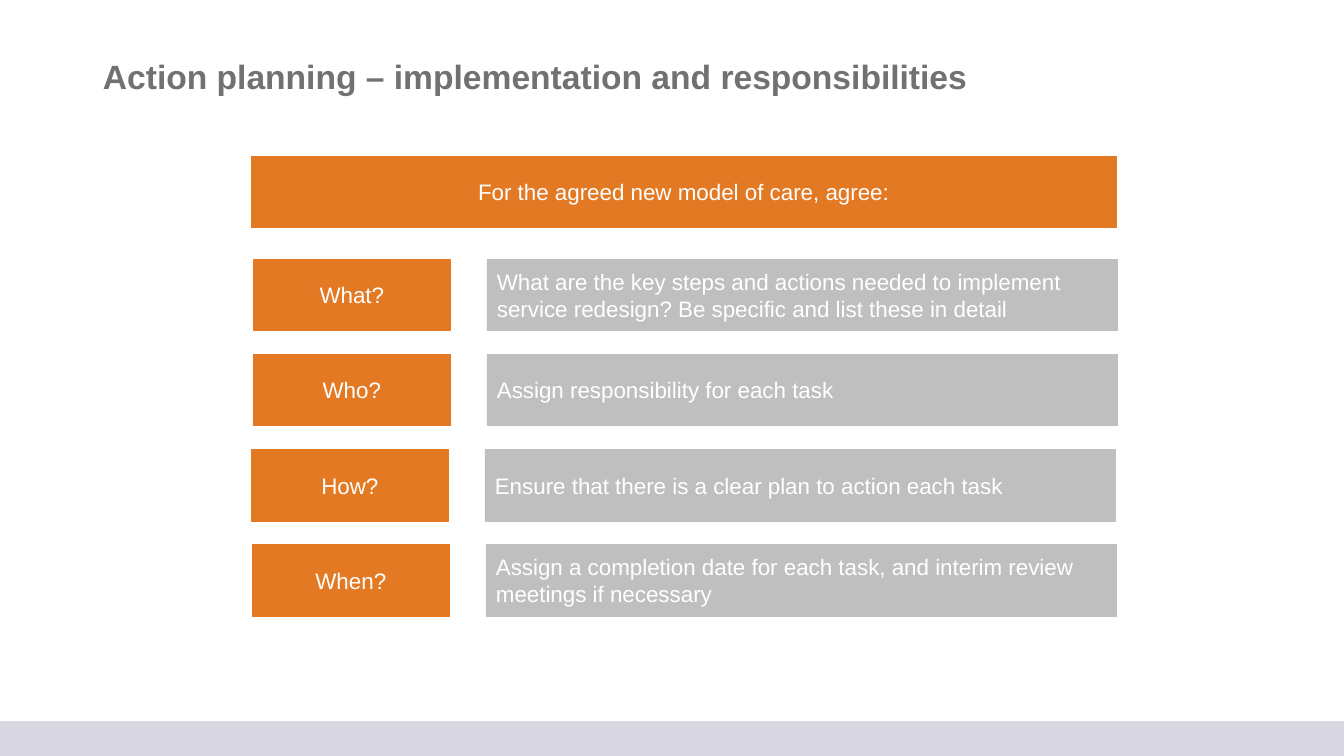
from pptx import Presentation
from pptx.dml.color import RGBColor
from pptx.enum.shapes import MSO_SHAPE as Shape
from pptx.enum.text import MSO_ANCHOR as Anchor, PP_ALIGN as Align
from pptx.util import Inches, Pt

ORANGE, GREY, LILAC = "E47923", "BFBFBF", "D8D7E1"
WHITE, TITLE_GREY = "FFFFFF", "707173"
BOX_HEIGHT = 0.71


def style_text(frame, text, size, color, align):
    frame.text = text
    frame.word_wrap = True
    frame.vertical_anchor = Anchor.MIDDLE
    para = frame.paragraphs[0]
    para.alignment = align
    para.font.name = "Arial"
    para.font.size = Pt(size)
    para.font.color.rgb = RGBColor.from_string(color)
    return para


def add_box(left, top, width, height, color, line_width=0.5):
    box = page.shapes.add_shape(
        Shape.RECTANGLE, Inches(left), Inches(top), Inches(width), Inches(height))
    box.shadow.inherit = False
    box.fill.solid()
    box.fill.fore_color.rgb = RGBColor.from_string(color)
    box.line.color.rgb = RGBColor.from_string(color)
    box.line.width = Pt(line_width)
    return box


deck = Presentation()
deck.slide_width, deck.slide_height = Inches(13.33), Inches(7.5)
page = deck.slides.add_slide(deck.slide_layouts[5])

# Footer band
add_box(0, 7.16, 13.33, 0.34, LILAC, 1)

# Title
title = page.shapes.title
title.left, title.top = Inches(0.92), Inches(0.4)
title.width, title.height = Inches(11.5), Inches(0.75)
heading = style_text(
    title.text_frame, "Action planning – implementation and responsibilities",
    24, TITLE_GREY, Align.LEFT)
heading.font.bold = True
heading.line_spacing = 0.9

# Banner
banner = add_box(2.49, 1.55, 8.58, BOX_HEIGHT, ORANGE)
style_text(banner.text_frame, "For the agreed new model of care, agree:",
           16, WHITE, Align.CENTER)

# Question and answer rows: left edge, question, answer
rows = [
    (2.51, "What?", "What are the key steps and actions needed to implement "
                    "service redesign? Be specific and list these in detail"),
    (2.51, "Who?", "Assign responsibility for each task"),
    (2.49, "How?", "Ensure that there is a clear plan to action each task"),
    (2.5, "When?", "Assign a completion date for each task, and interim review "
                   "meetings if necessary"),
]
for index, (left, question, answer) in enumerate(rows):
    top = 2.57 + index * 0.944
    question_box = add_box(left, top, 1.96, BOX_HEIGHT, ORANGE)
    style_text(question_box.text_frame, question, 16, WHITE, Align.CENTER)
    answer_box = add_box(left + 2.32, top, 6.25, BOX_HEIGHT, GREY)
    style_text(answer_box.text_frame, answer, 16, WHITE, Align.LEFT)

deck.save("out.pptx")
